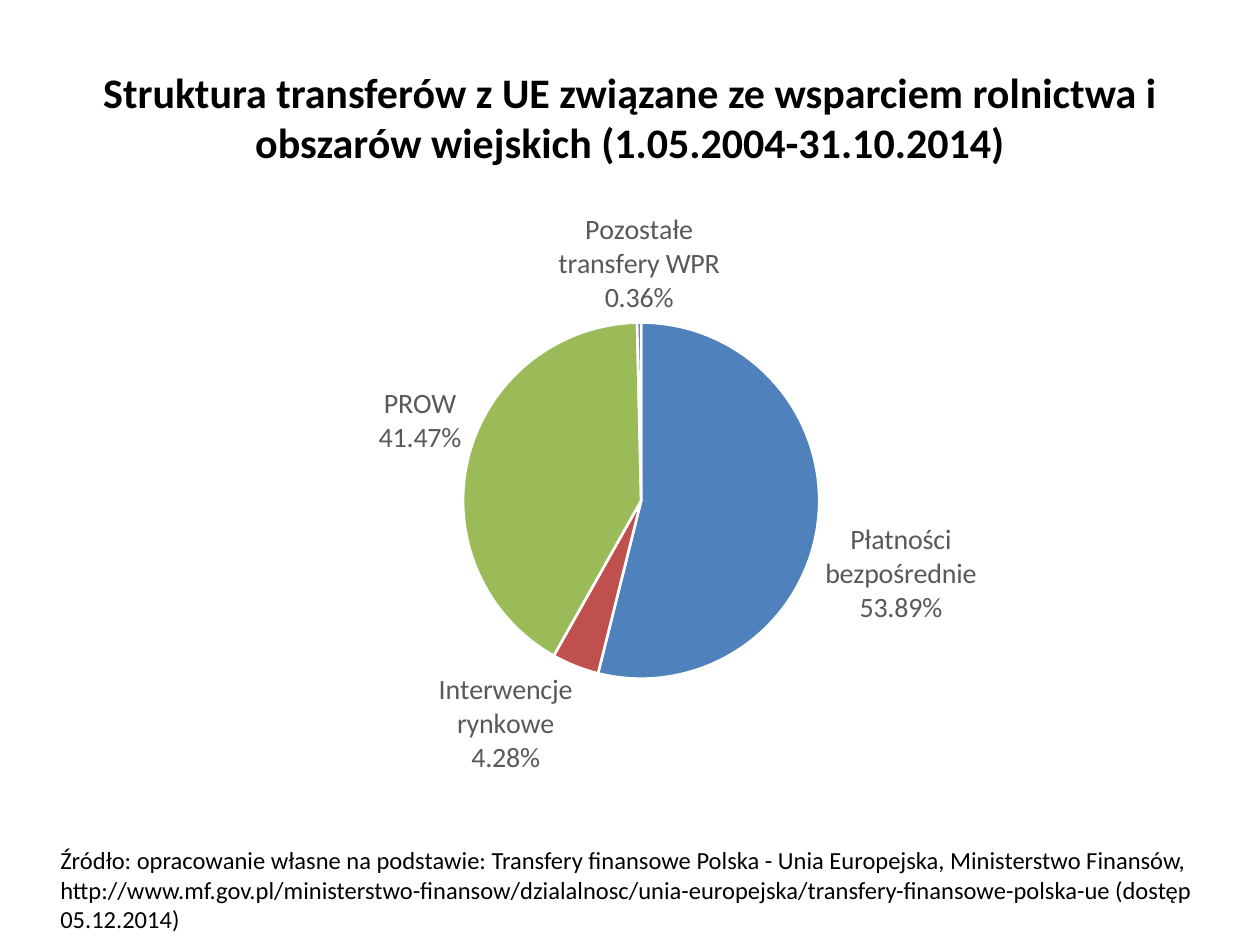
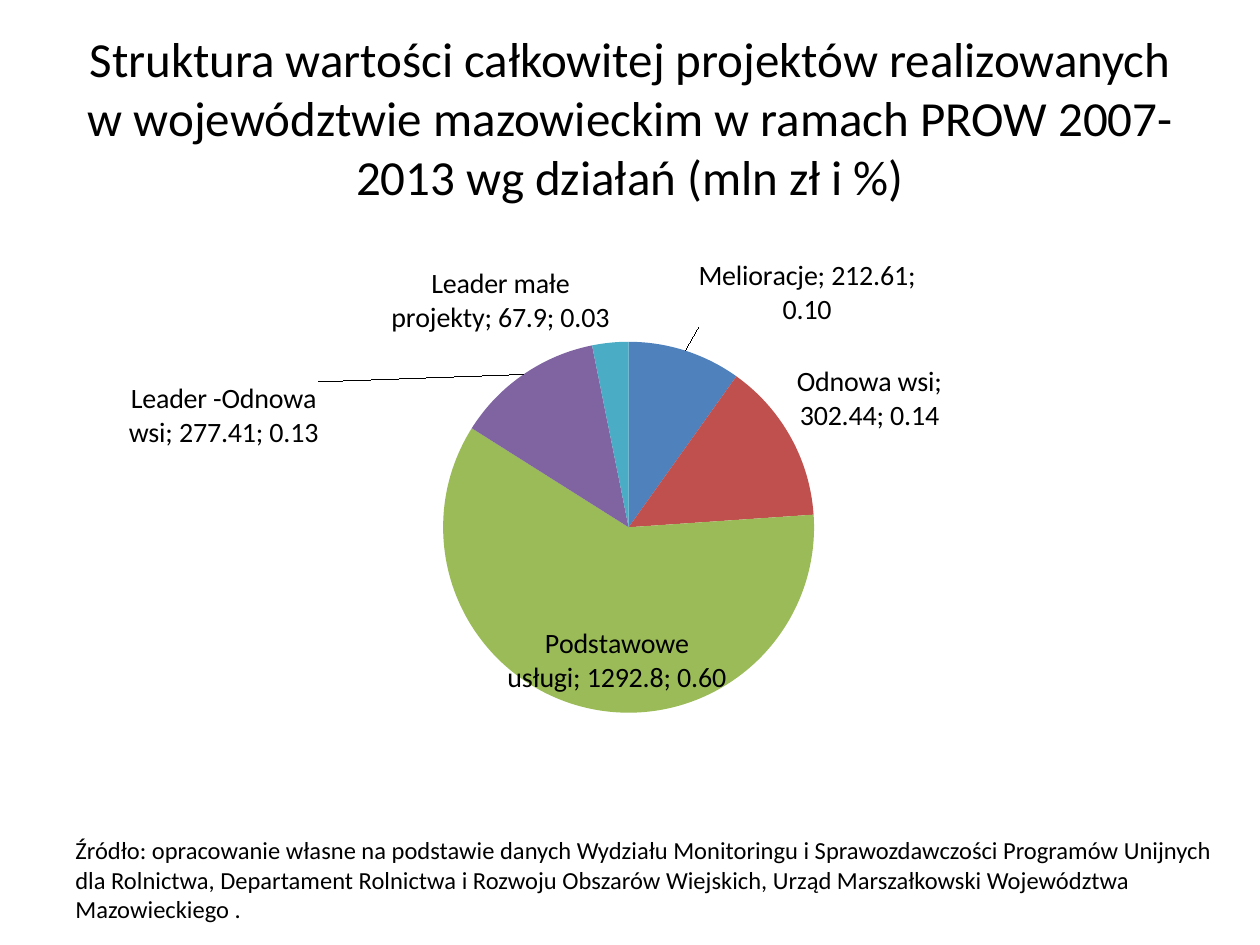
from pptx import Presentation
from pptx.chart.data import CategoryChartData as Data
from pptx.dml.color import RGBColor
from pptx.enum.chart import XL_CHART_TYPE as Kind, XL_LABEL_POSITION as Pos
from pptx.enum.text import MSO_ANCHOR as Anchor, PP_ALIGN as Align
from pptx.oxml import parse_xml
from pptx.oxml.ns import nsdecls, qn
from pptx.util import Inches, Pt

FONT = "Calibri"
BLACK, GREY, WHITE = "000000", "595959", "FFFFFF"
SLICES = ["4F81BD", "C0504D", "9BBB59", "8064A2", "4BACC6"]
TITLE_BOX = (0.5, 0.3, 9, 1.25)


def color(code):
    """Turn a hex string into a colour."""
    return RGBColor.from_string(code)


def style(font, size, code=BLACK, bold=False):
    """Set the shared typeface with a size, colour and weight."""
    font.name, font.size, font.bold = FONT, Pt(size), bold
    font.color.rgb = color(code)


def write(slide, box, text, size, bold=False, align=Align.LEFT, anchor=Anchor.TOP):
    """Place one wrapped paragraph in a box."""
    frame = slide.shapes.add_textbox(*map(Inches, box)).text_frame
    frame.word_wrap = True
    frame.vertical_anchor = anchor
    para = frame.paragraphs[0]
    para.text, para.alignment = text, align
    style(para.font, size, bold=bold)


def title(slide, text, size, bold=False):
    """Add the centred slide title."""
    write(slide, TITLE_BOX, text, size, bold, Align.CENTER, Anchor.MIDDLE)


def layout(x, y, w=None, h=None):
    """Build a manual layout for the plot, or an offset for a label."""
    parts = {"x": x, "y": y}
    if w is None:
        modes = ""
    else:
        modes = '<c:layoutTarget val="inner"/><c:xMode val="edge"/><c:yMode val="edge"/>'
        parts.update(w=w, h=h)
    sizes = "".join(f'<c:{key} val="{val}"/>' for key, val in parts.items())
    return (f'<c:layout {nsdecls("c")}><c:manualLayout>{modes}{sizes}'
            "</c:manualLayout></c:layout>")


def shift(labels, moves, form):
    """Move single labels by fractions of the chart size."""
    flags = {"LegendKey": 0, "Val": 1, "CatName": 1, "SerName": 0,
             "Percent": 1, "BubbleSize": 0}
    shows = "".join(f'<c:show{key} val="{val}"/>' for key, val in flags.items())
    for spot, (idx, move) in enumerate(moves.items()):
        labels.insert(spot, parse_xml(
            f'<c:dLbl {nsdecls("c")}><c:idx val="{idx}"/>{layout(*move)}'
            f'<c:numFmt formatCode="{form}" sourceLinked="0"/>'
            f'<c:dLblPos val="outEnd"/>{shows}'
            "<c:separator>; </c:separator></c:dLbl>"))


def pie(slide, box, rows, plot, size, code, form, gap, value=False, edge=False, moves=None):
    """Draw a labelled pie chart in a box."""
    data = Data()
    data.categories = list(rows)
    data.add_series("Series 1", list(rows.values()))
    chart = slide.shapes.add_chart(Kind.PIE, *map(Inches, box), data).chart
    chart.has_legend = chart.has_title = False
    style(chart.font, size, code)
    chart.plots[0].vary_by_categories = True
    series = chart.plots[0].series[0]
    for idx, fill in enumerate(SLICES[:len(rows)]):
        part = series.points[idx].format
        part.fill.solid()
        part.fill.fore_color.rgb = color(fill)
        if edge:
            part.line.color.rgb = color(WHITE)
            part.line.width = Pt(1.5)
        else:
            part.line.fill.background()

    labels = series.data_labels
    style(labels.font, size, code)
    labels.number_format, labels.number_format_is_linked = form, False
    labels.position = Pos.OUTSIDE_END
    labels.show_category_name = labels.show_percentage = True
    labels.show_value = value
    node = chart.element.xpath("//c:ser/c:dLbls")[0]
    node.find(qn("c:showBubbleSize")).addnext(
        parse_xml(f'<c:separator {nsdecls("c")}>{gap}</c:separator>'))
    shift(node, moves or {}, form)

    area = chart.element.xpath("//c:plotArea")[0]
    for old in area.findall(qn("c:layout")):
        area.remove(old)
    area.insert(0, parse_xml(layout(*plot)))


def transfers(slide):
    """Build the slide on transfers from the EU."""
    title(slide, "Struktura transferów z UE związane ze wsparciem rolnictwa i "
          "obszarów wiejskich (1.05.2004-31.10.2014)", 24, True)
    rows = {"Płatności bezpośrednie": 53.89, "Interwencje rynkowe": 4.28,
            "PROW": 41.47, "Pozostałe transfery WPR": 0.36}
    pie(slide, (1.46, 1.55, 7.64, 4.8), rows, (0.29, 0.21, 0.37, 0.59),
        16, GREY, "0.00%", "\n", edge=True)
    write(slide, (0.38, 6.66, 9.65, 0.81),
          "Źródło: opracowanie własne na podstawie: Transfery finansowe Polska - "
          "Unia Europejska, Ministerstwo Finansów, http://www.mf.gov.pl/"
          "ministerstwo-finansow/dzialalnosc/unia-europejska/"
          "transfery-finansowe-polska-ue (dostęp 05.12.2014)", 14)


def projects(slide):
    """Build the slide on project values by measure."""
    title(slide, "Struktura wartości całkowitej projektów realizowanych w "
          "województwie mazowieckim w ramach PROW 2007-2013 wg działań "
          "(mln zł i %)", 28)
    rows = {"Melioracje": 212.61, "Odnowa wsi": 302.44, "Podstawowe usługi": 1292.8,
            "Leader -Odnowa wsi": 277.41, "Leader małe projekty": 67.9}
    moves = {0: (0.01, -0.03), 2: (0.13, -0.16), 3: (-0.18, 0.15)}
    pie(slide, (0.83, 2.02, 8.85, 4.33), rows, (0.08, 0.16, 0.78, 0.68),
        16, BLACK, "0.00", "; ", value=True, moves=moves)
    write(slide, (0.5, 6.58, 9.3, 0.81),
          "Źródło: opracowanie własne na podstawie danych Wydziału Monitoringu i "
          "Sprawozdawczości Programów Unijnych dla Rolnictwa, Departament Rolnictwa "
          "i Rozwoju Obszarów Wiejskich, Urząd Marszałkowski Województwa "
          "Mazowieckiego .", 14)


def main():
    """Build and save the deck."""
    deck = Presentation()
    deck.slide_width, deck.slide_height = Inches(10), Inches(7.5)
    for build in (transfers, projects):
        build(deck.slides.add_slide(deck.slide_layouts[6]))
    deck.save("out.pptx")


if __name__ == "__main__":
    main()
